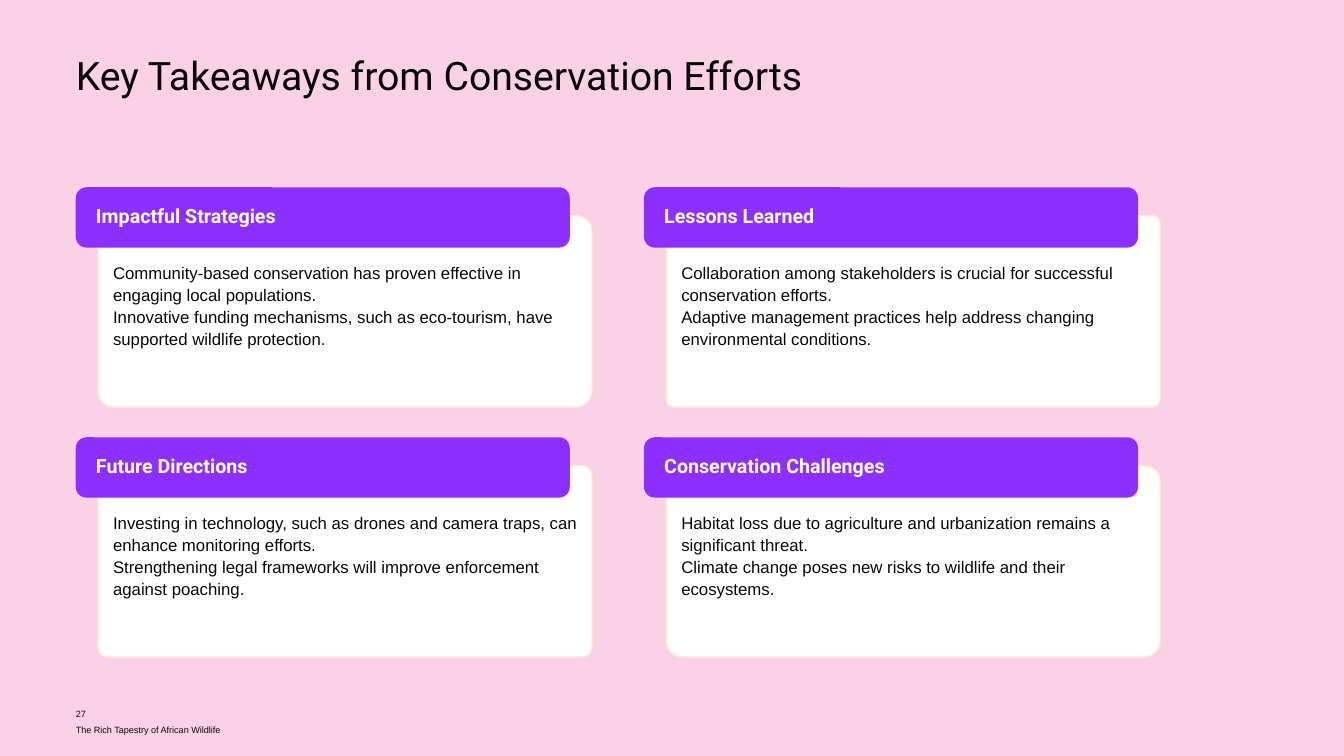
from pptx import Presentation
from pptx.dml.color import RGBColor
from pptx.enum.shapes import MSO_SHAPE as Shape
from pptx.enum.text import MSO_ANCHOR as Anchor
from pptx.util import Cm, Pt

CARDS = [  # column, row, corner radius, heading, lines
    (1, 1, 0.4, "Conservation Challenges", [
        "Habitat loss due to agriculture and urbanization remains a significant threat.",
        "Climate change poses new risks to wildlife and their ecosystems."]),
    (0, 1, 0.24, "Future Directions", [
        "Investing in technology, such as drones and camera traps, can enhance monitoring efforts.",
        "Strengthening legal frameworks will improve enforcement against poaching."]),
    (1, 0, 0.19, "Lessons Learned", [
        "Collaboration among stakeholders is crucial for successful conservation efforts.",
        "Adaptive management practices help address changing environmental conditions."]),
    (0, 0, 0.4, "Impactful Strategies", [
        "Community-based conservation has proven effective in engaging local populations.",
        "Innovative funding mechanisms, such as eco-tourism, have supported wildlife protection."]),
]


def color(code):
    return RGBColor.from_string(code)


def write(frame, *lines, font="Arial", size=12, ink="080808", bold=False,
          space=1.0, anchor=Anchor.TOP):
    frame.word_wrap = True
    frame.vertical_anchor = anchor
    frame.margin_left = frame.margin_right = 0
    frame.margin_top = frame.margin_bottom = 0
    for i, line in enumerate(lines):
        para = frame.add_paragraph() if i else frame.paragraphs[0]
        para.line_spacing = space
        run = para.add_run()
        run.text = line
        run.font.name = font
        run.font.size = Pt(size)
        run.font.bold = bold
        run.font.color.rgb = color(ink)


class Deck:
    pink, white, violet, cream = "FBD1E6", "FFFFFF", "8D2FFF", "FFE5DB"
    head = "Roboto"
    left, top = 1.91, 4.72
    step_x, step_y = 14.32, 6.3
    width = 12.45

    def __init__(self):
        self.prs = Presentation()
        self.prs.slide_width, self.prs.slide_height = Cm(33.87), Cm(19.05)
        self.slide = self.prs.slides.add_slide(self.prs.slide_layouts[6])
        fill = self.slide.background.fill
        fill.solid()
        fill.fore_color.rgb = color(self.pink)

    def text(self, x, y, w, h, *lines, **style):
        box = self.slide.shapes.add_textbox(Cm(x), Cm(y), Cm(w), Cm(h))
        write(box.text_frame, *lines, **style)

    def panel(self, x, y, w, h, radius, fill, edge=None):
        box = self.slide.shapes.add_shape(
            Shape.ROUNDED_RECTANGLE, Cm(x), Cm(y), Cm(w), Cm(h))
        box.shadow.inherit = False
        box.adjustments[0] = radius / min(w, h)
        box.fill.solid()
        box.fill.fore_color.rgb = color(fill)
        if edge:
            box.line.color.rgb = color(edge)
            box.line.width = Pt(1)
        else:
            box.line.fill.background()

    def card(self, col, row, radius, title, lines):
        x = self.left + col * self.step_x
        y = self.top + row * self.step_y
        # White body
        self.panel(x + 0.56, y + 0.71, self.width, 4.83, radius, self.white, self.cream)
        self.text(x + 0.94, y + 1.85, 11.81, 3.68, *lines, space=1.1)
        # Violet heading
        self.panel(x, y, self.width, 1.52, 0.27, self.violet)
        self.text(x + 0.51, y + 0.25, 11.43, 1.02, title, font=self.head, size=14,
                  ink=self.white, bold=True, space=0.9, anchor=Anchor.MIDDLE)


def main():
    deck = Deck()

    # Footer
    deck.text(deck.left, 17.86, 7.62, 0.28, "27", size=6.5, anchor=Anchor.MIDDLE)
    deck.text(deck.left, 18.24, 17.53, 0.28, "The Rich Tapestry of African Wildlife",
              size=6.5, anchor=Anchor.MIDDLE)

    # Title
    deck.text(deck.left, 1.3, 30.05, 2.18, "Key Takeaways from Conservation Efforts",
              font=deck.head, size=28)

    # Cards
    for card in CARDS:
        deck.card(*card)

    deck.prs.save("out.pptx")


if __name__ == "__main__":
    main()
